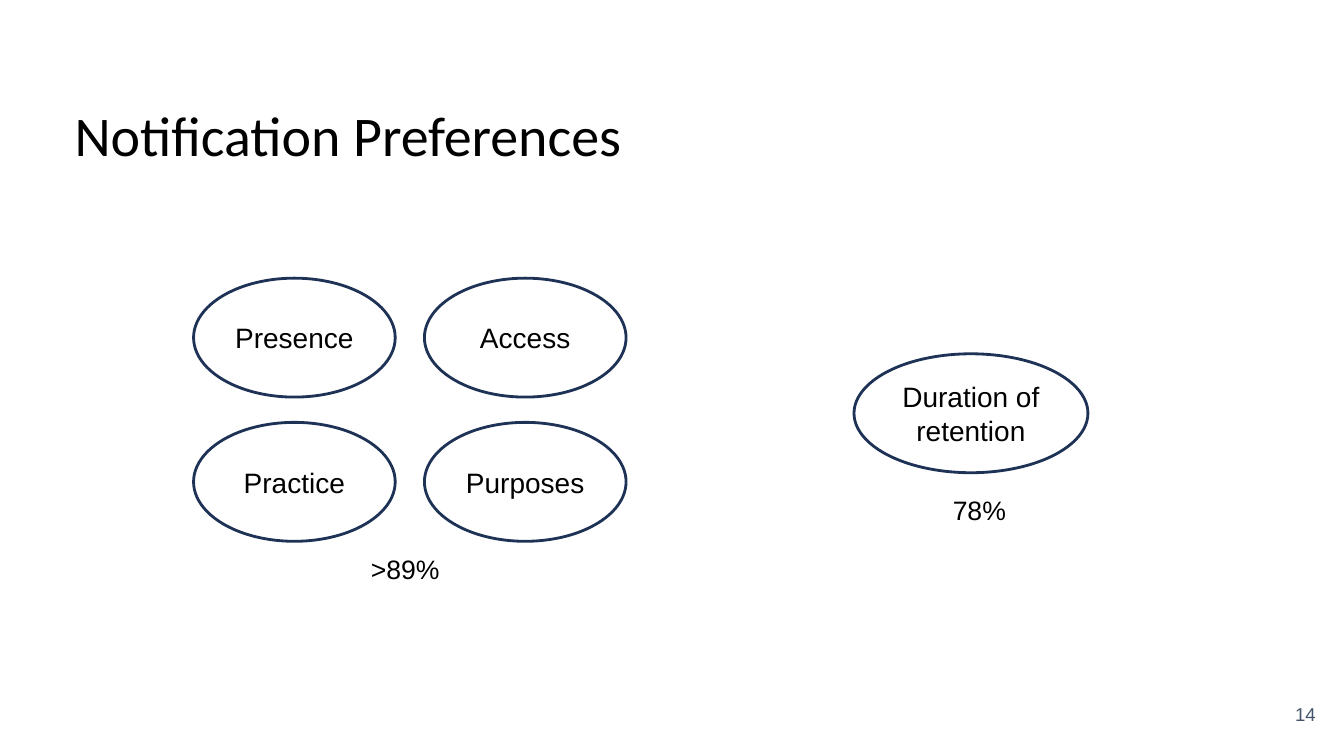
from dataclasses import dataclass

from pptx import Presentation
from pptx.dml.color import RGBColor as RGB
from pptx.enum.shapes import MSO_SHAPE as SHAPE
from pptx.enum.text import MSO_ANCHOR as ANCHOR, MSO_AUTO_SIZE as AUTO, PP_ALIGN as ALIGN
from pptx.util import Pt

PX = 9144  # EMU per px, 100 px to the inch


@dataclass(frozen=True)
class Theme:
    ink: RGB = RGB(0x00, 0x00, 0x00)
    outline: RGB = RGB(0x1E, 0x32, 0x56)
    muted: RGB = RGB(0x44, 0x54, 0x6A)
    heading: str = "Calibri"
    body: str = "Arial"
    title_size: float = 40
    oval_size: float = 20
    share_size: float = 19
    number_size: float = 13.3
    line_width: float = 2


THEME = Theme()


def px(*lengths):
    return [n * PX for n in lengths]


def write(sp, text, size, font=THEME.body, color=THEME.ink,
          align=ALIGN.LEFT, anchor=ANCHOR.TOP, inset=13):
    """Put one formatted paragraph in a shape."""
    tf = sp.text_frame
    tf.word_wrap = True
    tf.auto_size = AUTO.NONE
    tf.vertical_anchor = anchor
    tf.margin_left = tf.margin_right = tf.margin_top = tf.margin_bottom = inset * PX
    p = tf.paragraphs[0]
    p.text = text
    p.alignment = align
    p.font.name = font
    p.font.size = Pt(size)
    p.font.color.rgb = color


def add_title(s, text):
    sp = s.shapes.title
    sp.left, sp.top, sp.width, sp.height = px(61, 87, 1211, 111)
    write(sp, text, THEME.title_size, font=THEME.heading)


def add_oval(s, text, x, y, w=200):
    sp = s.shapes.add_shape(SHAPE.OVAL, *px(x, y, w, 118))
    sp.shadow.inherit = False
    sp.fill.background()
    sp.line.color.rgb = THEME.outline
    sp.line.width = Pt(THEME.line_width)
    write(sp, text, THEME.oval_size, align=ALIGN.CENTER, anchor=ANCHOR.MIDDLE, inset=5)


def add_share(s, text, x, y):
    write(s.shapes.add_textbox(*px(x, y, 103, 59)), text, THEME.share_size)


def add_number(s, text):
    sp = s.shapes.add_textbox(*px(1235, 680, 80, 57))
    write(sp, text, THEME.number_size, color=THEME.muted,
          align=ALIGN.RIGHT, anchor=ANCHOR.MIDDLE, inset=10)


def main():
    prs = Presentation()
    prs.slide_width, prs.slide_height = px(1333, 750)
    s = prs.slides.add_slide(prs.slide_layouts[5])
    add_title(s, "Notification Preferences")

    # Left group: two by two ovals with their shared figure
    for row, labels in enumerate([("Presence", "Access"), ("Practice", "Purposes")]):
        for col, label in enumerate(labels):
            add_oval(s, label, 192 + 229 * col, 276 + 143 * row)
    add_share(s, ">89%", 355, 536)

    # Right group: one wider oval with its figure
    add_oval(s, "Duration of retention", 847, 351, w=232)
    add_share(s, "78%", 932, 477)

    # Slide number
    add_number(s, "14")
    prs.save("out.pptx")


if __name__ == "__main__":
    main()
